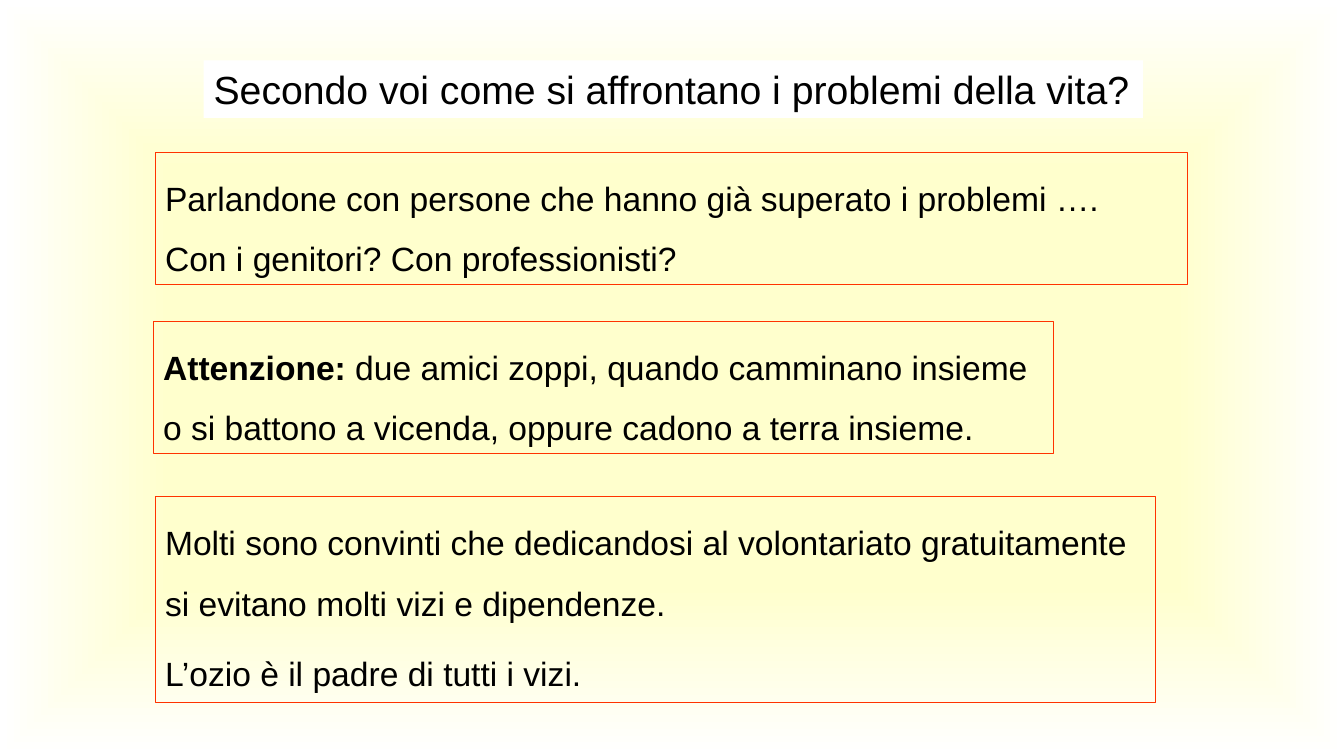
from dataclasses import dataclass

from lxml import etree
from pptx import Presentation
from pptx.dml.color import RGBColor
from pptx.enum.text import MSO_ANCHOR, MSO_AUTO_SIZE, PP_ALIGN
from pptx.oxml.ns import qn
from pptx.util import Cm, Pt

LEFT, TOP, FIXED = PP_ALIGN.LEFT, MSO_ANCHOR.TOP, MSO_AUTO_SIZE.NONE
TITLE_ONLY = 5


@dataclass(frozen=True)
class Theme:
    font: str = "Arial"
    ink: RGBColor = RGBColor(0x00, 0x00, 0x00)
    paper: RGBColor = RGBColor(0xFF, 0xFF, 0xFF)
    cream: RGBColor = RGBColor(0xFF, 0xFF, 0xCD)
    border: RGBColor = RGBColor(0xFF, 0x33, 0x00)
    title_size: Pt = Pt(28)
    body_size: Pt = Pt(24)
    border_width: Pt = Pt(0.75)
    body_spacing: float = 1.5
    paragraph_gap: Pt = Pt(7)


THEME = Theme()
QUESTION = "Secondo voi come si affrontano i problemi della vita?"
QUESTION_AREA = (5.13, 1.52, 23.67, 1.45)

# Each answer: area in cm (left, top, width, height), gap between paragraphs,
# and paragraphs as (bold lead, text)
ANSWERS = [
    ((3.91, 3.84, 26.01, 3.33), Pt(0), [
        ("", "Parlandone con persone che hanno già superato i problemi …."),
        ("", "Con i genitori? Con professionisti?"),
    ]),
    ((3.86, 8.1, 22.68, 3.33), Pt(0), [
        ("Attenzione:", " due amici zoppi, quando camminano insieme o si battono "
                        "a vicenda, oppure cadono a terra insieme."),
    ]),
    ((3.91, 12.52, 25.22, 5.18), THEME.paragraph_gap, [
        ("", "Molti sono convinti che dedicandosi al volontariato gratuitamente "
             "si evitano molti vizi e dipendenze."),
        ("", "L’ozio è il padre di tutti i vizi."),
    ]),
]


def paint_background(slide):
    """Cream centre fading to white along a rectangular gradient path."""
    fill = slide.background.fill
    fill.gradient()
    stops = ((0.55, THEME.cream), (1, THEME.paper))
    for stop, (position, color) in zip(fill.gradient_stops, stops):
        stop.position = position
        stop.color.rgb = color
    gradient = slide.element.find(".//" + qn("a:gradFill"))
    gradient.remove(gradient.find(qn("a:lin")))
    shade = etree.SubElement(gradient, qn("a:path"), path="shape")
    etree.SubElement(shade, qn("a:fillToRect"),
                     {side: "50000" for side in "ltrb"})


def format_paragraph(paragraph, size, spacing):
    paragraph.alignment = LEFT
    paragraph.line_spacing = spacing
    paragraph.font.name = THEME.font
    paragraph.font.size = size
    paragraph.font.color.rgb = THEME.ink


def format_frame(frame, wrap):
    frame.word_wrap = wrap
    frame.auto_size = FIXED
    frame.vertical_anchor = TOP


def add_question(slide):
    title = slide.shapes.title
    title.left, title.top, title.width, title.height = map(Cm, QUESTION_AREA)
    title.fill.solid()
    title.fill.fore_color.rgb = THEME.paper
    title.text_frame.text = QUESTION
    format_frame(title.text_frame, wrap=False)
    format_paragraph(title.text_frame.paragraphs[0], THEME.title_size, 1.0)


def add_answer(slide, area, gap, paragraphs):
    answer = slide.shapes.add_textbox(*map(Cm, area))
    answer.line.color.rgb = THEME.border
    answer.line.width = THEME.border_width
    frame = answer.text_frame
    format_frame(frame, wrap=True)
    for index, (lead, text) in enumerate(paragraphs):
        paragraph = frame.add_paragraph() if index else frame.paragraphs[0]
        if index:
            paragraph.space_before = gap
        if lead:
            lead_run = paragraph.add_run()
            lead_run.text = lead
            lead_run.font.bold = True
        paragraph.add_run().text = text
        format_paragraph(paragraph, THEME.body_size, THEME.body_spacing)


def main():
    deck = Presentation()
    deck.slide_width, deck.slide_height = Cm(33.87), Cm(19.05)
    slide = deck.slides.add_slide(deck.slide_layouts[TITLE_ONLY])
    paint_background(slide)
    add_question(slide)
    for area, gap, paragraphs in ANSWERS:
        add_answer(slide, area, gap, paragraphs)
    deck.save("out.pptx")


if __name__ == "__main__":
    main()
